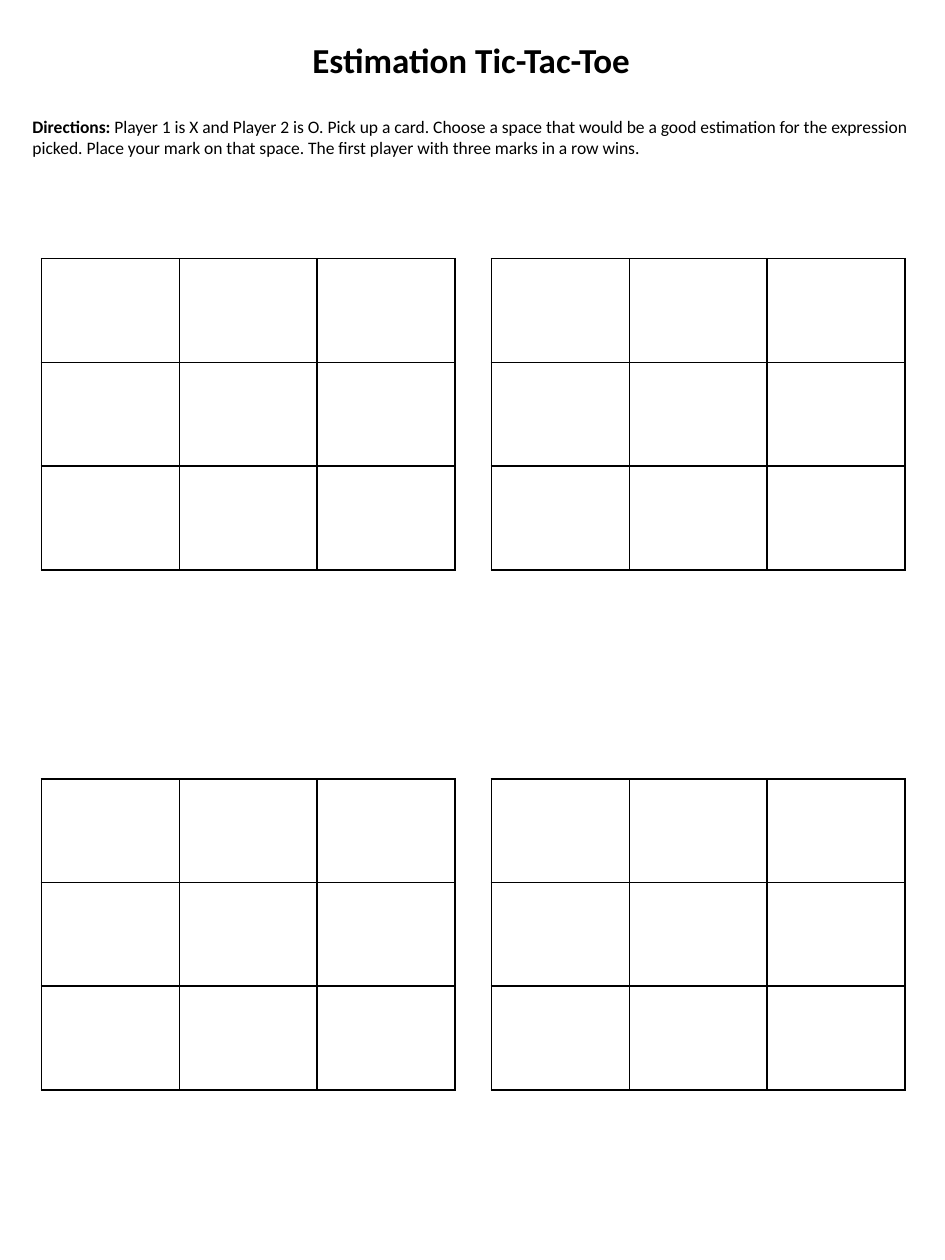
from lxml import etree
from pptx import Presentation
from pptx.dml.color import RGBColor
from pptx.enum.text import MSO_ANCHOR, MSO_AUTO_SIZE, PP_ALIGN
from pptx.oxml import parse_xml
from pptx.util import Pt

BLACK = RGBColor(0, 0, 0)
WHITE = RGBColor(255, 255, 255)
FONT = "Calibri"
CENTER, LEFT = PP_ALIGN.CENTER, PP_ALIGN.LEFT
MIDDLE = MSO_ANCHOR.MIDDLE
NO_AUTOFIT = MSO_AUTO_SIZE.NONE
DRAWING_NS = "http://schemas.openxmlformats.org/drawingml/2006/main"

MARGIN = 11.5
BAND_WIDTH, BAND_HEIGHT = 515.5, 44.6
CELL_WIDTH, CELL_HEIGHT = 78.8, 59.3
GRID_SIZE = 3
BOARD_LEFTS = (23.7, 280.8)
BOARD_TOPS = (147.8, 445)


def format_band(shape, top, size, alignment):
    """Place a full-width white text band and format its text."""
    shape.left, shape.top = Pt(MARGIN), Pt(top)
    shape.width, shape.height = Pt(BAND_WIDTH), Pt(BAND_HEIGHT)
    shape.fill.solid()
    shape.fill.fore_color.rgb = WHITE
    shape.line.color.rgb = WHITE
    shape.line.width = Pt(1)
    text_frame = shape.text_frame
    text_frame.word_wrap = True
    text_frame.auto_size = NO_AUTOFIT
    text_frame.vertical_anchor = MIDDLE
    paragraph = text_frame.paragraphs[0]
    paragraph.alignment = alignment
    for run in paragraph.runs:
        run.font.name = FONT
        run.font.size = Pt(size)
        run.font.color.rgb = BLACK


def add_borders(cell):
    """Draw a 1 pt black line on each side of a cell."""
    properties = cell._tc.get_or_add_tcPr()
    for side in ("lnL", "lnR", "lnT", "lnB"):
        properties.append(parse_xml(
            f'<a:{side} xmlns:a="{DRAWING_NS}" w="{Pt(1)}"><a:solidFill>'
            f'<a:srgbClr val="{BLACK}"/></a:solidFill></a:{side}>'))


presentation = Presentation()
presentation.slide_width = Pt(540)
presentation.slide_height = Pt(720)
slide = presentation.slides.add_slide(presentation.slide_layouts[5])

# Title
title = slide.shapes.title
title.text_frame.text = "Estimation Tic-Tac-Toe"
format_band(title, MARGIN, 20, CENTER)
title.text_frame.paragraphs[0].runs[0].font.bold = True

# Directions
directions = slide.shapes.add_textbox(0, 0, Pt(BAND_WIDTH), Pt(BAND_HEIGHT))
paragraph = directions.text_frame.paragraphs[0]
label = paragraph.add_run()
label.text = "Directions:"
label.font.bold = True
paragraph.add_run().text = (
    " Player 1 is X and Player 2 is O. Pick up a card. Choose a space that "
    "would be a good estimation for the expression picked. Place your mark on "
    "that space. The first player with three marks in a row wins.")
format_band(directions, MARGIN + BAND_HEIGHT, 10, LEFT)

# Four game boards
for top in BOARD_TOPS:
    for left in BOARD_LEFTS:
        board = slide.shapes.add_table(
            GRID_SIZE, GRID_SIZE, Pt(left), Pt(top),
            Pt(GRID_SIZE * CELL_WIDTH), Pt(GRID_SIZE * CELL_HEIGHT)).table
        board.first_row = False
        board.horz_banding = False
        for cell in board.iter_cells():
            add_borders(cell)
            cell.fill.background()

presentation.save("out.pptx")
